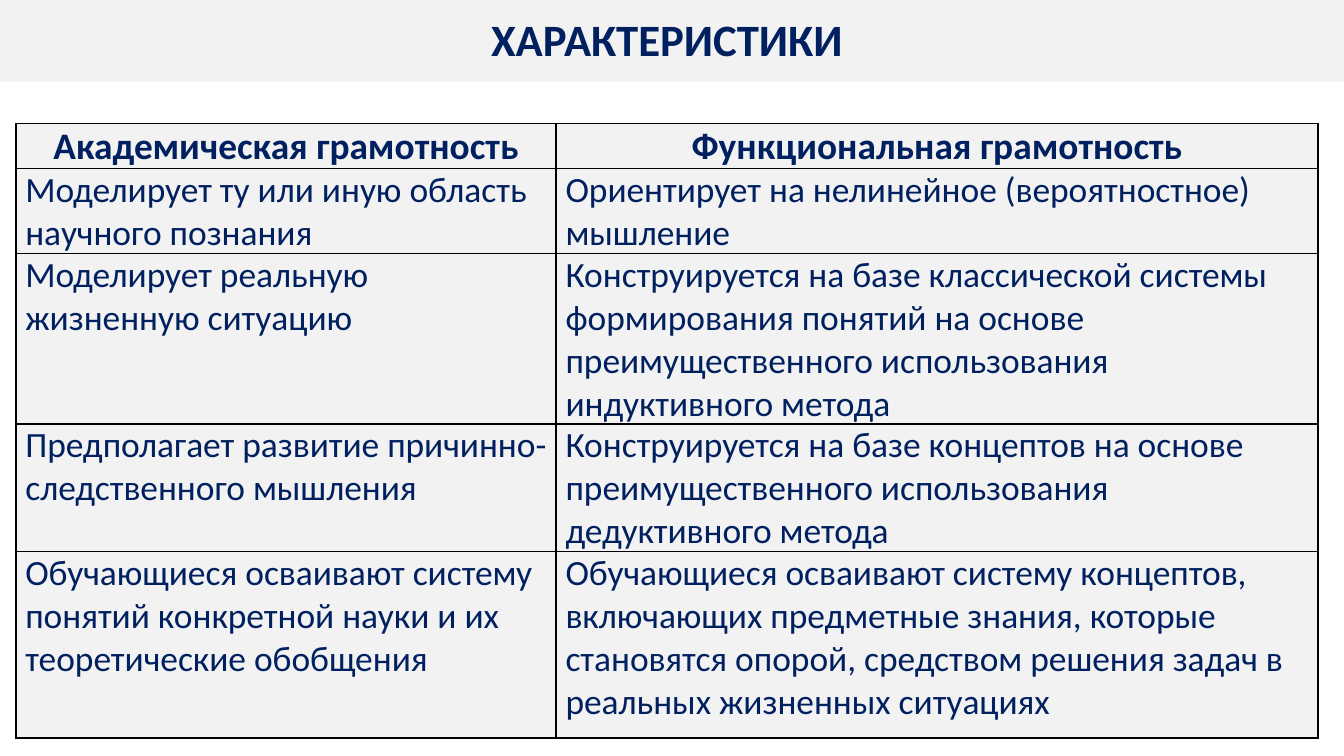
from lxml import etree
from pptx import Presentation
from pptx import util as u
from pptx.dml import color
from pptx.enum import shapes, text
from pptx.oxml import ns

COLORS = {"panel": "F2F2F2", "ink": "002060", "border": "000000"}
FORMATS = {
    "title": {"name": "Calibri", "size": u.Pt(24), "bold": True},
    "header": {"name": "Calibri", "size": u.Pt(20), "bold": True},
    "body": {"name": "Calibri", "size": u.Pt(19), "bold": False},
}
CELL_MARGINS = {"margin_left": u.Pt(5), "margin_right": u.Pt(5),
                "margin_top": 0, "margin_bottom": 0}
COLUMN_WIDTHS = [289.4, 408.2]
ROW_HEIGHTS = [23, 44.6, 88.6, 66.2, 100]
CHARACTERISTICS = [
    ("Академическая грамотность", "Функциональная грамотность"),
    ("Моделирует ту или иную область научного познания",
     "Ориентирует на нелинейное (вероятностное) мышление"),
    ("Моделирует реальную жизненную ситуацию",
     "Конструируется на базе классической системы формирования понятий "
     "на основе преимущественного использования индуктивного метода"),
    ("Предполагает развитие причинно-следственного мышления",
     "Конструируется на базе концептов на основе преимущественного "
     "использования дедуктивного метода"),
    ("Обучающиеся осваивают систему понятий конкретной науки и их "
     "теоретические обобщения",
     "Обучающиеся осваивают систему концептов, включающих предметные знания, "
     "которые становятся опорой, средством решения задач в реальных "
     "жизненных ситуациях"),
]


def rgb(key):
    """Return the named palette colour."""
    return color.RGBColor.from_string(COLORS[key])


def set_all(target, values):
    """Set every attribute in a dict of format values."""
    for attribute, value in values.items():
        setattr(target, attribute, value)


def write(frame, wording, style, align):
    """Write one formatted paragraph into a text frame."""
    paragraph = frame.paragraphs[0]
    paragraph.alignment = align
    run = paragraph.add_run()
    run.text = wording
    set_all(run.font, FORMATS[style])
    run.font.color.rgb = rgb("ink")


def add_borders(cell):
    """Outline a cell with thin lines placed ahead of its fill."""
    properties = cell._tc.get_or_add_tcPr()
    for position, side in enumerate(("lnL", "lnR", "lnT", "lnB")):
        line = etree.Element(ns.qn(f"a:{side}"), w=str(u.Pt(1)))
        fill = etree.SubElement(line, ns.qn("a:solidFill"))
        etree.SubElement(fill, ns.qn("a:srgbClr"), val=COLORS["border"])
        properties.insert(position, line)


def add_heading(slide, left, top, width, height):
    """Place the heading band with the slide title on it."""
    band = slide.shapes.add_shape(shapes.MSO_SHAPE.RECTANGLE, u.Pt(left),
                                  u.Pt(top), u.Pt(width), u.Pt(height))
    band.shadow.inherit = False
    band.fill.solid()
    band.fill.fore_color.rgb = rgb("panel")
    band.line.fill.background()
    title = slide.shapes.title
    title.element.addprevious(band.element)
    set_all(title, {"left": u.Pt(left), "top": u.Pt(top + 4.4),
                    "width": u.Pt(width), "height": u.Pt(36)})
    set_all(title.text_frame, {
        "word_wrap": True, "vertical_anchor": text.MSO_ANCHOR.TOP,
        "auto_size": text.MSO_AUTO_SIZE.SHAPE_TO_FIT_TEXT})
    write(title.text_frame, "ХАРАКТЕРИСТИКИ ", "title", text.PP_ALIGN.CENTER)


def add_comparison(slide, left, top, width, height):
    """Place the table comparing the two kinds of literacy."""
    comparison = slide.shapes.add_table(
        len(ROW_HEIGHTS), len(COLUMN_WIDTHS), u.Pt(left), u.Pt(top),
        u.Pt(width), u.Pt(height)).table
    for column, column_width in zip(comparison.columns, COLUMN_WIDTHS):
        column.width = u.Pt(column_width)
    for index, (row, wordings) in enumerate(zip(comparison.rows, CHARACTERISTICS)):
        row.height = u.Pt(ROW_HEIGHTS[index])
        style = "body" if index else "header"
        align = text.PP_ALIGN.LEFT if index else text.PP_ALIGN.CENTER
        for cell, wording in zip(row.cells, wordings):
            set_all(cell, CELL_MARGINS)
            cell.fill.solid()
            cell.fill.fore_color.rgb = rgb("panel")
            add_borders(cell)
            write(cell.text_frame, wording, style, align)


def main():
    """Build and save the slide."""
    deck = Presentation()
    set_all(deck, {"slide_width": u.Pt(720), "slide_height": u.Pt(405)})
    slide = deck.slides.add_slide(deck.slide_layouts.get_by_name("Title Only"))
    add_heading(slide, 0, -1.5, 720, 45.3)
    add_comparison(slide, 8.6, 66.2, sum(COLUMN_WIDTHS), sum(ROW_HEIGHTS))
    deck.save("out.pptx")


if __name__ == "__main__":
    main()
